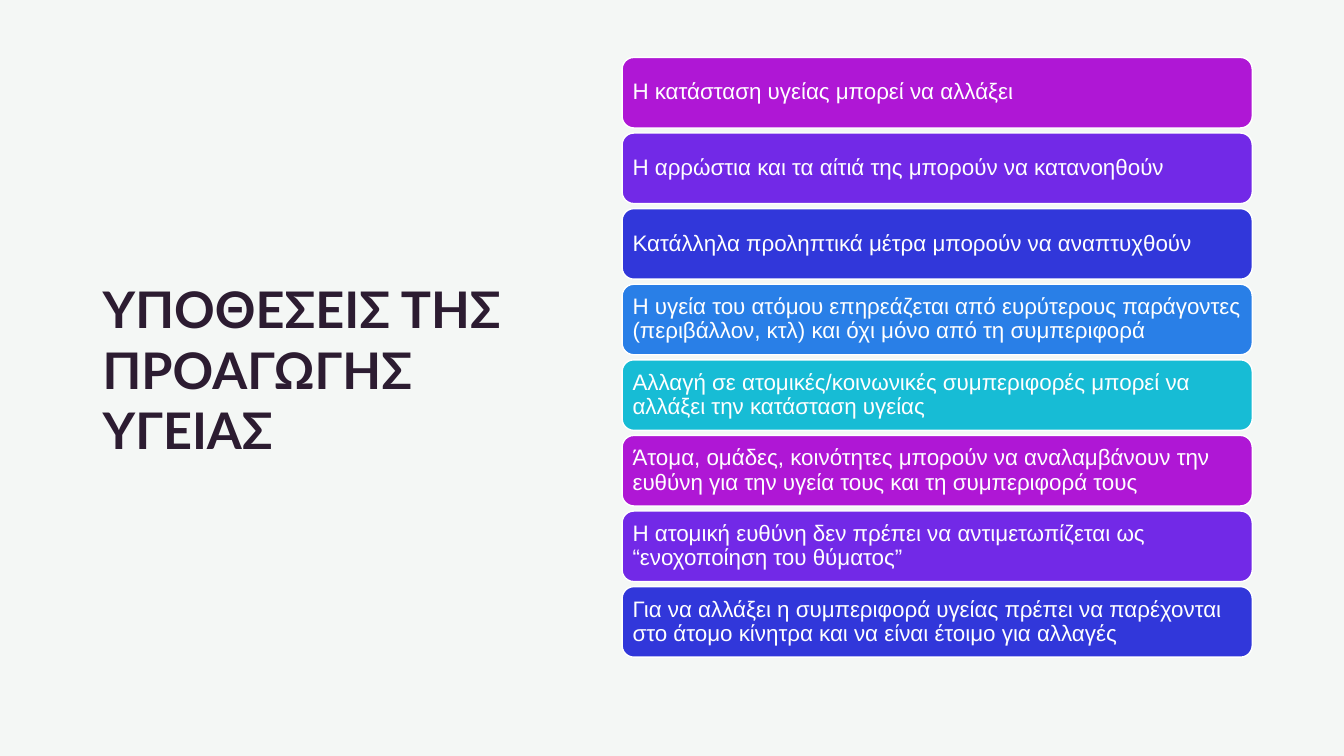
from pptx import Presentation
from pptx import util as u
from pptx.dml.color import RGBColor
from pptx.enum import shapes, text

PX = 9144  # 100 px to the inch

BACKDROP = RGBColor(0xF4, 0xF7, 0xF5)
PLUM = RGBColor(0x2C, 0x1C, 0x31)
WHITE = RGBColor(0xFF, 0xFF, 0xFF)
BAR_COLOURS = [
    RGBColor(0xAF, 0x17, 0xD5),
    RGBColor(0x72, 0x29, 0xE7),
    RGBColor(0x31, 0x37, 0xDA),
    RGBColor(0x29, 0x7F, 0xE7),
    RGBColor(0x17, 0xBC, 0xD5),
]

HEADING = "ΥΠΟΘΕΣΕΙΣ ΤΗΣ ΠΡΟΑΓΩΓΗΣ ΥΓΕΙΑΣ"
ASSUMPTIONS = [
    "H κατάσταση υγείας μπορεί να αλλάξει",
    "Η αρρώστια και τα αίτιά της μπορούν να κατανοηθούν",
    "Κατάλληλα προληπτικά μέτρα μπορούν να αναπτυχθούν",
    "Η υγεία του ατόμου επηρεάζεται από ευρύτερους παράγοντες "
    "(περιβάλλον, κτλ) και όχι μόνο από τη συμπεριφορά",
    "Αλλαγή σε ατομικές/κοινωνικές συμπεριφορές μπορεί να "
    "αλλάξει την κατάσταση υγείας",
    "Άτομα, ομάδες, κοινότητες μπορούν να αναλαμβάνουν την "
    "ευθύνη για την υγεία τους και τη συμπεριφορά τους",
    "Η ατομική ευθύνη δεν πρέπει να αντιμετωπίζεται ως "
    "“ενοχοποίηση του θύματος”",
    "Για να αλλάξει η συμπεριφορά υγείας πρέπει να παρέχονται "
    "στο άτομο κίνητρα και να είναι έτοιμο για αλλαγές",
]

HEADING_FONT = {"name": "Lato", "size": u.Pt(36), "bold": True}
BAR_FONT = {"name": "Arial", "size": u.Pt(16)}
BAR_MARGINS = ("margin_left", "margin_top", "margin_right", "margin_bottom")
BAR_LEFT, BAR_TOP, BAR_WIDTH, BAR_HEIGHT, BAR_PITCH = 617, 57, 625, 70, 75


def box(left, top, width, height):
    return [n * PX for n in (left, top, width, height)]


def write(owner, words, font, colour):
    frame = owner.text_frame
    frame.word_wrap = True
    frame.vertical_anchor = text.MSO_ANCHOR.MIDDLE
    line = frame.paragraphs[0]
    line.alignment = text.PP_ALIGN.LEFT
    run = line.add_run()
    run.text = words
    for key, value in font.items():
        setattr(run.font, key, value)
    run.font.color.rgb = colour
    return frame


deck = Presentation()
deck.slide_width, deck.slide_height = 1333 * PX, 750 * PX
slide = deck.slides.add_slide(deck.slide_layouts[6])

# Background
slide.background.fill.solid()
slide.background.fill.fore_color.rgb = BACKDROP

# Heading on the left
heading = slide.shapes.add_textbox(*box(92, 61, 480, 610))
write(heading, HEADING, HEADING_FONT, PLUM)

# Stack of assumptions, colours cycling
for i, assumption in enumerate(ASSUMPTIONS):
    bar = slide.shapes.add_shape(
        shapes.MSO_SHAPE.ROUNDED_RECTANGLE,
        *box(BAR_LEFT, BAR_TOP + i * BAR_PITCH, BAR_WIDTH, BAR_HEIGHT))
    bar.shadow.inherit = False
    bar.fill.solid()
    bar.fill.fore_color.rgb = BAR_COLOURS[i % len(BAR_COLOURS)]
    bar.line.color.rgb = WHITE
    bar.line.width = u.Pt(1)
    frame = write(bar, assumption, BAR_FONT, WHITE)
    frame.paragraphs[0].line_spacing = 0.9
    for margin in BAR_MARGINS:
        setattr(frame, margin, 7 * PX)

deck.save("out.pptx")
